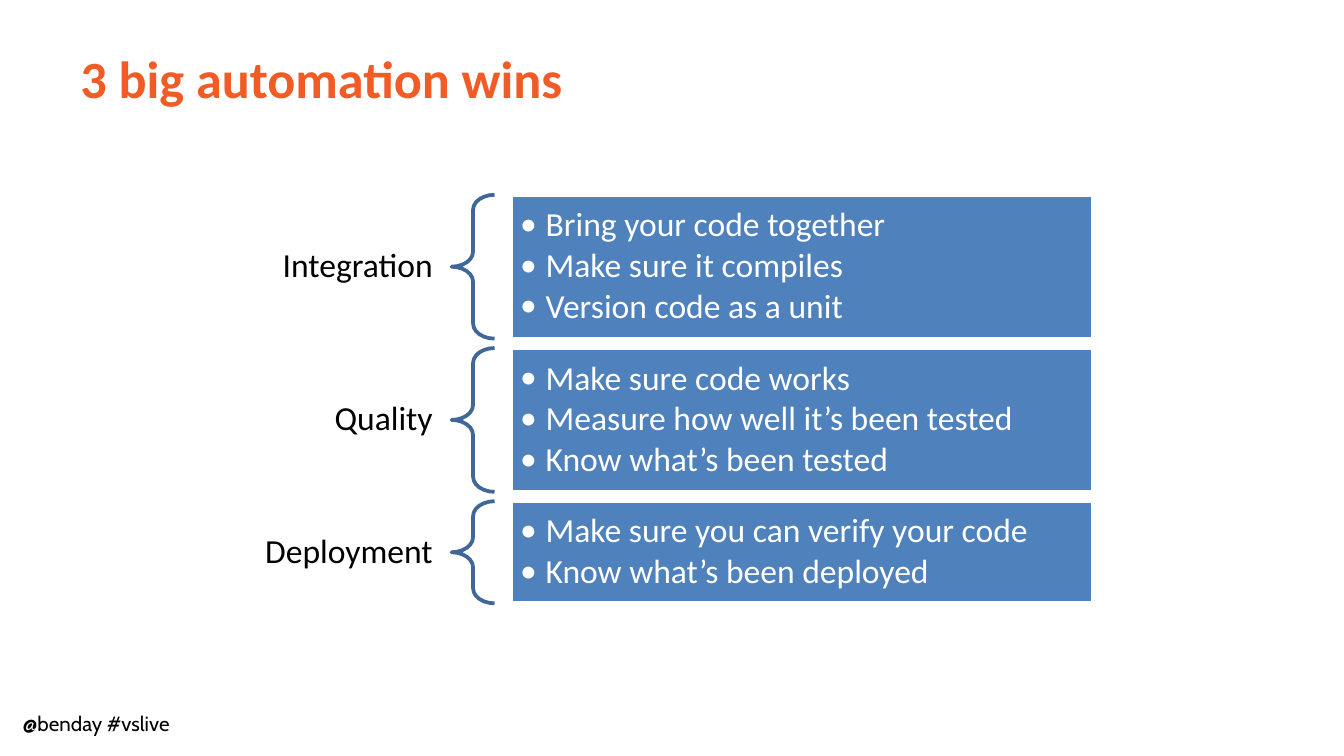
from dataclasses import dataclass

from lxml.etree import SubElement
from pptx import Presentation
from pptx.dml.color import RGBColor
from pptx.enum.shapes import MSO_SHAPE as Shape
from pptx.enum.text import MSO_ANCHOR as Anchor, PP_ALIGN as Align
from pptx.oxml.ns import qn
from pptx.util import Emu, Pt

PX = 9144  # 100 px to the inch
COLORS = {"title": "F15B26", "text": "000000", "brace": "3F6797",
          "box": "4F81BD", "white": "FFFFFF"}
TOP, GAP, INDENT = 145, 7, 19
LABEL_X, LABEL_W, LABEL_H = 177, 159, 39
BRACE_X, BRACE_W = 336, 32
BOX_X, BOX_W = 380, 433


@dataclass
class Win:
    label: str
    height: int
    points: list[str]


WINS = [
    Win("Integration", 107, ["Bring your code together", "Make sure it compiles",
                             "Version code as a unit"]),
    Win("Quality", 107, ["Make sure code works", "Measure how well it’s been tested",
                         "Know what’s been tested"]),
    Win("Deployment", 76, ["Make sure you can verify your code",
                           "Know what’s been deployed"]),
]


def px(n: float) -> Emu:
    return Emu(round(n * PX))


def color(name: str) -> RGBColor:
    return RGBColor.from_string(COLORS[name])


def set_margins(tf, side: int, end: int) -> None:
    tf.margin_left = tf.margin_right = px(side)
    tf.margin_top = tf.margin_bottom = px(end)


def style(p, size: int, name: str, font: str = "Calibri", bold: bool = False) -> None:
    for r in p.runs:
        r.font.size, r.font.name, r.font.bold = Pt(size), font, bold
        r.font.color.rgb = color(name)


def add_text(s, x: float, y: float, w: float, h: float, text: str):
    """Add a one-line text box and return its text frame."""
    tf = s.shapes.add_textbox(px(x), px(y), px(w), px(h)).text_frame
    tf.text = text
    tf.word_wrap = True
    tf.vertical_anchor = Anchor.MIDDLE
    return tf


def add_shape(s, kind, x: int, y: int, w: int, h: int, line: str):
    sp = s.shapes.add_shape(kind, px(x), px(y), px(w), px(h))
    sp.shadow.inherit = False
    sp.line.color.rgb = color(line)
    sp.line.width = Pt(2)
    return sp


def add_bullet(p) -> None:
    pPr = p._p.get_or_add_pPr()
    pPr.set("marL", str(px(INDENT)))
    pPr.set("indent", str(-px(INDENT)))
    SubElement(pPr, qn("a:buFont")).set("typeface", "Calibri")
    SubElement(pPr, qn("a:buChar")).set("char", "•")


def add_win(s, win: Win, y: int) -> None:
    """Draw one row: label, brace and box of bullet points."""
    tf = add_text(s, LABEL_X, y + (win.height - LABEL_H) / 2, LABEL_W, LABEL_H, win.label)
    set_margins(tf, 14, 5)
    p = tf.paragraphs[0]
    p.alignment, p.line_spacing = Align.RIGHT, 0.9
    style(p, 18, "text")

    brace = add_shape(s, Shape.LEFT_BRACE, BRACE_X, y, BRACE_W, win.height, "brace")
    brace.adjustments[0] = 0.35
    brace.fill.background()

    box = add_shape(s, Shape.RECTANGLE, BOX_X, y, BOX_W, win.height, "white")
    box.fill.solid()
    box.fill.fore_color.rgb = color("box")
    tf = box.text_frame
    set_margins(tf, 7, 7)
    tf.word_wrap = True
    tf.vertical_anchor = Anchor.MIDDLE
    tf.text = "\n".join(win.points)
    for p in tf.paragraphs:
        add_bullet(p)
        p.level, p.alignment, p.line_spacing = 1, Align.LEFT, 0.9
        p.space_after = Pt(2.4)
        style(p, 18, "white")


def main() -> None:
    prs = Presentation()
    prs.slide_width = px(1000)
    prs.slide_height = Emu(prs.slide_width * 9 // 16)
    s = prs.slides.add_slide(prs.slide_layouts[6])

    footer = add_text(s, 7, 524, 135, 29, "@benday #vslive")
    footer.word_wrap = False
    footer.vertical_anchor = Anchor.TOP
    style(footer.paragraphs[0], 11, "text", font="Cabin")

    title = add_text(s, 50, 23, 900, 70, "3 big automation wins")
    style(title.paragraphs[0], 28, "title", bold=True)

    y = TOP
    for win in WINS:
        add_win(s, win, y)
        y += win.height + GAP
    prs.save("out.pptx")


if __name__ == "__main__":
    main()
